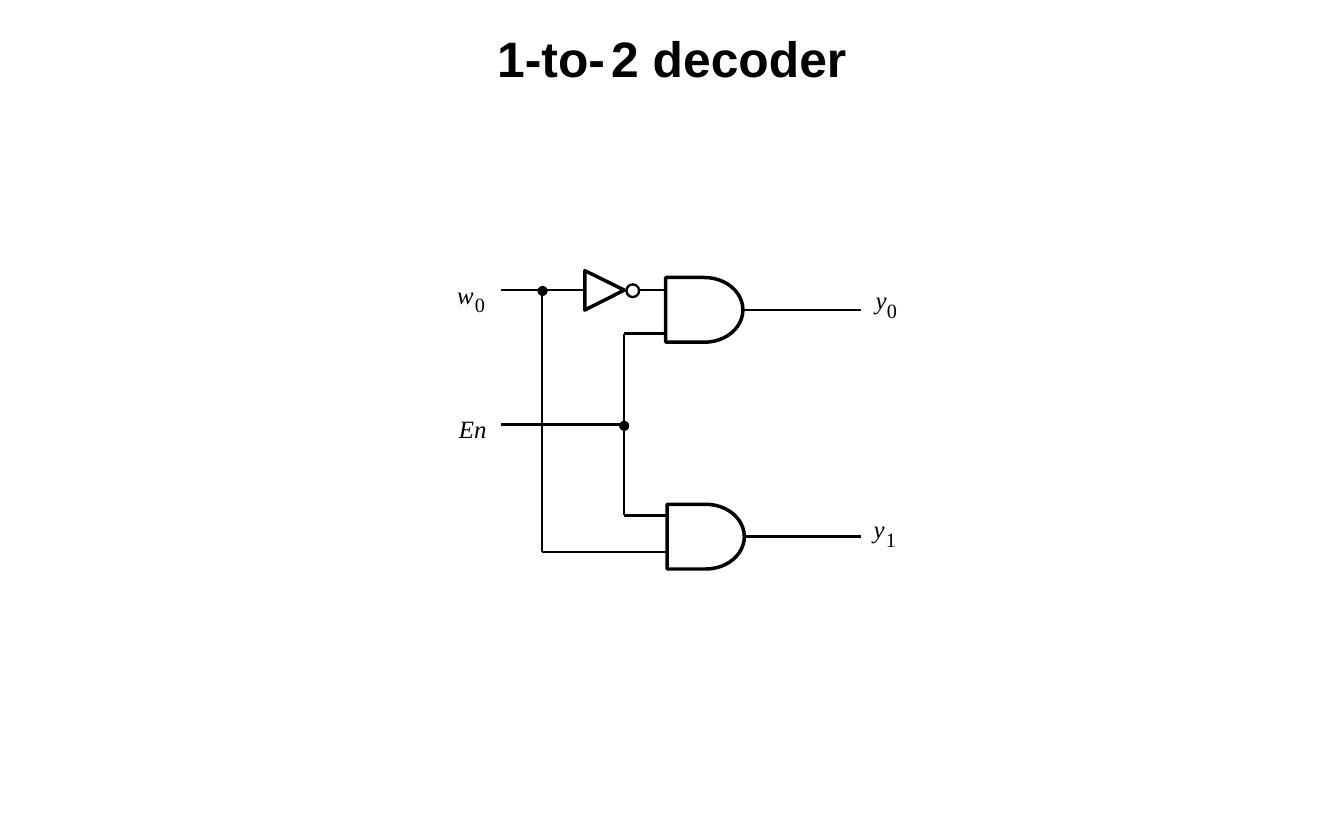
from pptx import Presentation
from pptx.dml.color import RGBColor
from pptx.enum.shapes import MSO_CONNECTOR, MSO_SHAPE
from pptx.enum.text import MSO_ANCHOR, MSO_AUTO_SIZE, PP_ALIGN
from pptx.oxml.ns import qn
from pptx.util import Pt

COLORS = {"ink": "000000", "paper": "FFFFFF"}
INK = RGBColor.from_string(COLORS["ink"])
PAPER = RGBColor.from_string(COLORS["paper"])
THIN, THICK = 1.5, 2.25

NAME = {"name": "Times New Roman", "size": Pt(16), "italic": True}
INDEX = {"name": "Times New Roman", "size": Pt(13), "italic": False}
HEADING = {"name": "Arial", "size": Pt(32), "bold": True}
HEADING_GAP = {**HEADING, "size": Pt(14)}


def add_span(para, text, style):
    span = para.add_run()
    span.text = text
    span.font.color.rgb = INK
    for key, value in style.items():
        setattr(span.font, key, value)


def outline(shape, weight, fill=None):
    """Give a shape a black line and either a solid fill or none."""
    shape.shadow.inherit = False
    shape.line.color.rgb = INK
    shape.line.width = Pt(weight)
    if fill is None:
        shape.fill.background()
    else:
        shape.fill.solid()
        shape.fill.fore_color.rgb = fill


deck = Presentation()
deck.slide_width, deck.slide_height = Pt(864), Pt(540)
page = deck.slides.add_slide(deck.slide_layouts[6])

# Wires between shared columns and rows
left, w_column, en_column, gate_left, right = 321.8, 348.5, 401, 428, 553.7
w_row, en_row, upper_row, lower_row, bottom_row = 186.5, 273, 214.5, 331.3, 355
y0_row, y1_row = 199.2, 345
wires = [
    (left, w_row, 376, w_row),
    (409.7, w_row, gate_left, w_row),
    (w_column, w_row, w_column, bottom_row),
    (w_column, bottom_row, gate_left, bottom_row),
    (left, en_row, en_column, en_row),
    (en_column, upper_row, en_column, lower_row),
    (en_column, upper_row, gate_left, upper_row),
    (en_column, lower_row, gate_left, lower_row),
    (476.6, y0_row, right, y0_row),
    (476.6, y1_row, right, y1_row),
]
for ends in wires:
    wire = page.shapes.add_connector(MSO_CONNECTOR.STRAIGHT, *map(Pt, ends))
    wire.line.color.rgb = INK
    wire.line.width = Pt(THIN)
    wire._element.spPr.append(wire._element.makeelement(qn("a:effectLst"), {}))

# Inverter: triangle and bubble
pen = page.shapes.build_freeform(Pt(401.4), Pt(w_row))
pen.add_line_segments([(Pt(376), Pt(199.3)), (Pt(376), Pt(174))], close=True)
outline(pen.convert_to_shape(), THICK)

# Bubble and junction dots, given by centre and diameter
for x, y, size, fill in [
    (406.8, 186.9, 8.2, PAPER),
    (w_column + 0.3, w_row + 0.6, 5, INK),
    (en_column + 0.3, en_row + 0.8, 5, INK),
]:
    circle = page.shapes.add_shape(
        MSO_SHAPE.OVAL, Pt(x - size / 2), Pt(y - size / 2), Pt(size), Pt(size))
    outline(circle, THIN, fill)

# AND gates, centred on their output wires
gate_width, gate_height = 49.6, 41.6
for x, y in [(gate_left, y0_row), (gate_left + 0.9, y1_row)]:
    gate = page.shapes.add_shape(
        MSO_SHAPE.FLOWCHART_DELAY, Pt(x), Pt(y - gate_height / 2),
        Pt(gate_width), Pt(gate_height))
    outline(gate, THICK, PAPER)

# Signal names and their indices
for text, style, x, y, width, height in [
    ("w", NAME, 293.8, 180, 15.8, 19.4),
    ("0", INDEX, 305.3, 188, 10, 15.8),
    ("En", NAME, 295, 265.7, 18, 19.4),
    ("y", NAME, 563, 183, 12.2, 19.4),
    ("0", INDEX, 570.2, 191.5, 10, 15.8),
    ("y", NAME, 561.6, 330.5, 12.2, 19.4),
    ("1", INDEX, 569.5, 339, 10, 15.8),
]:
    box = page.shapes.add_textbox(Pt(x), Pt(y), Pt(width), Pt(height))
    frame = box.text_frame
    layout = {"margin_left": 0, "margin_top": 0, "margin_right": 0, "margin_bottom": 0,
              "word_wrap": False, "auto_size": MSO_AUTO_SIZE.SHAPE_TO_FIT_TEXT}
    for key, value in layout.items():
        setattr(frame, key, value)
    add_span(frame.paragraphs[0], text, style)

# Title
title = page.shapes.add_textbox(Pt(72), Pt(12.2), Pt(720), Pt(54))
title.text_frame.word_wrap = True
title.text_frame.vertical_anchor = MSO_ANCHOR.MIDDLE
para = title.text_frame.paragraphs[0]
para.alignment = PP_ALIGN.CENTER
para.line_spacing = 0.9
for text, style in [("1-to-", HEADING), (" ", HEADING_GAP), ("2 decoder", HEADING)]:
    add_span(para, text, style)

deck.save("out.pptx")
